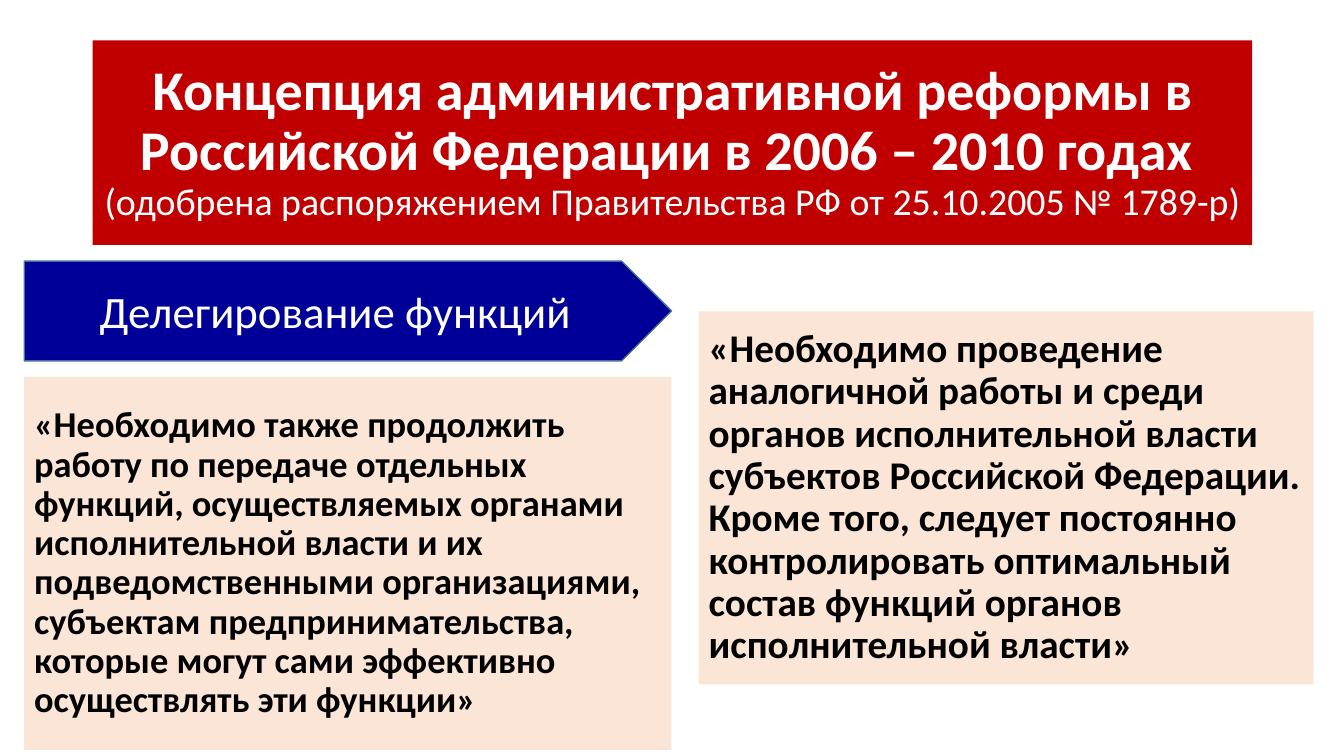
import pptx
import pptx.util
import pptx.dml.color
import pptx.enum.shapes
import pptx.enum.text

Inches = pptx.util.Inches
SHAPE = pptx.enum.shapes.MSO_SHAPE
ALIGN = pptx.enum.text.PP_ALIGN

THEME = {
    "font": "Calibri",
    "red": "C00000", "navy": "000099", "peach": "FBE5D6",
    "edge": "43739E", "white": "FFFFFF", "black": "000000",
    "title": 40, "decree": 27, "topic": 32, "left_quote": 26, "right_quote": 28,
}

LEFT, COLUMN_WIDTH, QUOTE_HEIGHT = 0.24, 6.42, 3.7
HEADING = {"alignment": ALIGN.CENTER, "line_spacing": 0.9}
TOPIC = {"alignment": ALIGN.CENTER}
QUOTE = {"alignment": ALIGN.LEFT, "line_spacing": 0.9, "space_before": pptx.util.Pt(10)}

BLOCKS = [
    {"form": SHAPE.RECTANGLE, "box": (0.92, 0.4, 11.5, 2.03),
     "fill": "red", "ink": "white", "paragraph": HEADING,
     "lines": [("Концепция административной реформы в Российской Федерации в 2006 – 2010 годах ",
                "title", True),
               ("(одобрена распоряжением Правительства РФ от 25.10.2005 № 1789-р)",
                "decree", False)]},
    {"form": SHAPE.RECTANGLE, "box": (LEFT, 3.74, COLUMN_WIDTH, QUOTE_HEIGHT),
     "fill": "peach", "ink": "black", "paragraph": QUOTE,
     "lines": [("«Необходимо также продолжить работу по передаче отдельных функций, "
                "осуществляемых органами исполнительной власти и их подведомственными "
                "организациями, субъектам предпринимательства, которые могут сами "
                "эффективно осуществлять эти функции»", "left_quote", True)]},
    {"form": SHAPE.PENTAGON, "box": (LEFT, 2.59, COLUMN_WIDTH, 0.99),
     "fill": "navy", "ink": "white", "edge": "edge", "paragraph": TOPIC,
     "lines": [("Делегирование функций", "topic", False)]},
    {"form": SHAPE.RECTANGLE, "box": (6.93, 3.09, 6.1, QUOTE_HEIGHT),
     "fill": "peach", "ink": "black", "paragraph": QUOTE,
     "lines": [("«Необходимо проведение аналогичной работы и среди органов исполнительной "
                "власти субъектов Российской Федерации. Кроме того, следует постоянно "
                "контролировать оптимальный состав функций органов исполнительной власти»",
                "right_quote", True)]},
]


def color(name):
    return pptx.dml.color.RGBColor.from_string(THEME[name])


def apply(target, values):
    for name, value in values.items():
        setattr(target, name, value)


def add_block(slide, block):
    panel = slide.shapes.add_shape(block["form"], *map(Inches, block["box"]))
    panel.shadow.inherit = False
    panel.fill.solid()
    panel.fill.fore_color.rgb = color(block["fill"])
    if "edge" in block:
        panel.line.color.rgb = color(block["edge"])
        panel.line.width = pptx.util.Pt(1)
    else:
        panel.line.fill.background()
    apply(panel.text_frame, {"word_wrap": True,
                             "vertical_anchor": pptx.enum.text.MSO_ANCHOR.MIDDLE})
    paragraph = panel.text_frame.paragraphs[0]
    apply(paragraph, block["paragraph"])
    for index, (wording, size, bold) in enumerate(block["lines"]):
        if index:
            paragraph.add_line_break()
        run = paragraph.add_run()
        run.text = wording
        apply(run.font, {"name": THEME["font"], "size": pptx.util.Pt(THEME[size]),
                         "bold": bold})
        run.font.color.rgb = color(block["ink"])


def main():
    deck = pptx.Presentation()
    apply(deck, {"slide_width": Inches(13.33), "slide_height": Inches(7.5)})
    slide = deck.slides.add_slide(deck.slide_layouts[6])
    for block in BLOCKS:
        add_block(slide, block)
    deck.save("out.pptx")


if __name__ == "__main__":
    main()
